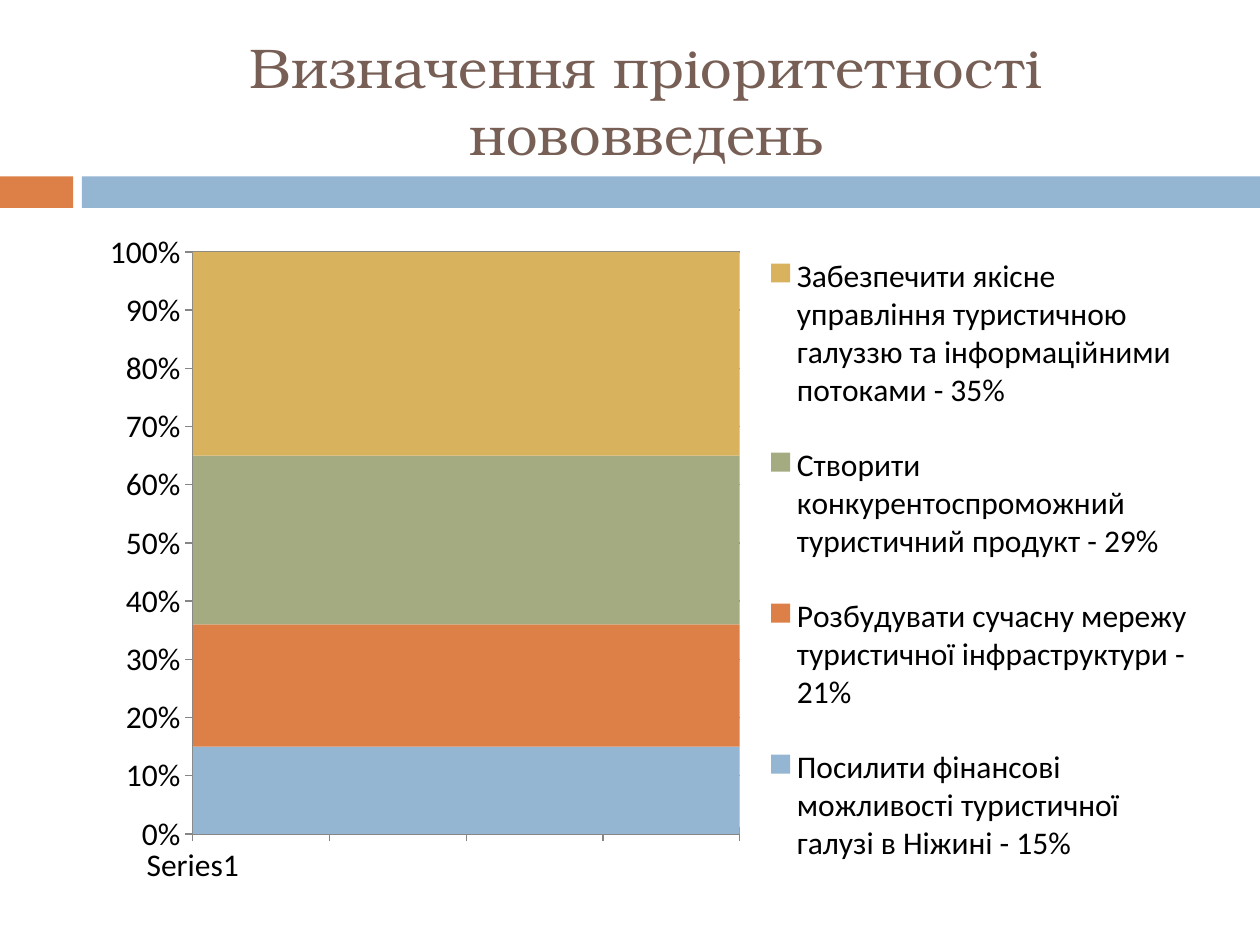
from lxml.etree import SubElement
from pptx import Presentation
from pptx.chart.data import CategoryChartData
from pptx.dml.color import RGBColor
from pptx.enum.chart import XL_CHART_TYPE as ChartType, XL_LEGEND_POSITION as LegendPosition, XL_TICK_MARK as Tick
from pptx.enum.shapes import MSO_SHAPE as Shape
from pptx.enum.text import MSO_ANCHOR as Anchor, PP_ALIGN as Align
from pptx.oxml.ns import qn
from pptx.util import Inches, Pt

TITLE = "Визначення пріоритетності нововведень"
CATEGORIES = ["Series1", "", "", "", ""]
PRIORITIES = [
    ("Посилити фінансові можливості туристичної галузі в Ніжині - 15%", 15, "94B6D2"),
    ("Розбудувати сучасну мережу туристичної інфраструктури - 21%", 21, "DD8047"),
    ("Створити конкурентоспроможний туристичний продукт - 29%", 29, "A5AB81"),
    ("Забезпечити якісне управління туристичною галуззю та інформаційними потоками - 35%", 35, "D8B25C"),
]
WIDTH, HEIGHT = 10, 7.5
BAND_TOP, BAND_HEIGHT = 1.4, 0.25
BANDS = [(0, 0.58, "DD8047"), (0.65, WIDTH - 0.65, "94B6D2")]
TITLE_AREA = (0.67, 0.25, 8.92, 1.08)
CHART_AREA = (0.67, 1.75, 8.9, 5.39)
PLOT_AREA = (1.53, 2.0, 4.34, 4.62)
LEGEND_AREA = (6.12, 1.75, 3.35, 5.39)
TITLE_FONT = {"name": "TeX Gyre Bonum", "size": Pt(32), "bold": False}
CHART_FONT = {"name": "Calibri", "size": Pt(18), "bold": False}
AXIS_FORMAT = {"major_tick_mark": Tick.CROSS, "minor_tick_mark": Tick.NONE, "visible": True}
SCALE = {"minimum_scale": 0, "maximum_scale": 1, "major_unit": 0.1, "has_major_gridlines": True}


def color(value):
    return RGBColor.from_string(value)


def apply(target, values):
    for name, value in values.items():
        setattr(target, name, value)


def paint(part, value):
    part.fill.solid()
    part.fill.fore_color.rgb = color(value)
    part.line.fill.background()


def place(element, area, inner=False):
    layout = element.find(qn("c:layout"))
    if layout is None:
        layout = SubElement(element, qn("c:layout"))
        element.insert(1 if element.tag == qn("c:legend") else 0, layout)
    manual = SubElement(layout, qn("c:manualLayout"))
    if inner:
        SubElement(manual, qn("c:layoutTarget")).set("val", "inner")
    for axis in "xy":
        SubElement(manual, qn(f"c:{axis}Mode")).set("val", "edge")
    left, top, width, height = CHART_AREA
    origins, sizes = (left, top, 0, 0), (width, height) * 2
    for name, length, origin, size in zip("xywh", area, origins, sizes):
        SubElement(manual, qn(f"c:{name}")).set("val", str((length - origin) / size))


def add_bands(page):
    for left, width, fill in BANDS:
        sizes = map(Inches, (left, BAND_TOP, width, BAND_HEIGHT))
        band = page.shapes.add_shape(Shape.RECTANGLE, *sizes)
        band.shadow.inherit = False
        paint(band, fill)


def add_title(page):
    frame = page.shapes.add_textbox(*map(Inches, TITLE_AREA)).text_frame
    apply(frame, {"word_wrap": True, "vertical_anchor": Anchor.MIDDLE})
    para = frame.paragraphs[0]
    para.alignment = Align.CENTER
    span = para.add_run()
    span.text = TITLE
    apply(span.font, TITLE_FONT)
    span.font.color.rgb = color("775F55")


def add_priorities(page):
    data = CategoryChartData(number_format="General")
    data.categories = CATEGORIES
    for name, share, _ in PRIORITIES:
        data.add_series(name, [share] * len(CATEGORIES))
    frame = page.shapes.add_chart(ChartType.AREA_STACKED_100, *map(Inches, CHART_AREA), data)
    chart = frame.chart
    apply(chart, {"has_title": False, "has_legend": True})
    apply(chart.font, CHART_FONT)
    chart.font.color.rgb = color("000000")
    apply(chart.legend, {"position": LegendPosition.RIGHT, "include_in_layout": False})
    chart.plots[0].vary_by_categories = False
    for series, (_, _, fill) in zip(chart.plots[0].series, PRIORITIES):
        paint(series.format, fill)
    for axis in (chart.category_axis, chart.value_axis):
        apply(axis, AXIS_FORMAT)
        axis.format.line.color.rgb = color("868686")
    apply(chart.value_axis, SCALE)
    chart.value_axis.major_gridlines.format.line.color.rgb = color("868686")
    apply(chart.value_axis.tick_labels, {"number_format": "0%", "number_format_is_linked": False})
    place(next(chart.element.iter(qn("c:plotArea"))), PLOT_AREA, inner=True)
    place(next(chart.element.iter(qn("c:legend"))), LEGEND_AREA)


def main():
    """Build the slide that ranks the planned innovations."""
    deck = Presentation()
    apply(deck, {"slide_width": Inches(WIDTH), "slide_height": Inches(HEIGHT)})
    page = deck.slides.add_slide(deck.slide_layouts[6])
    add_bands(page)
    add_title(page)
    add_priorities(page)
    deck.save("out.pptx")


if __name__ == "__main__":
    main()
